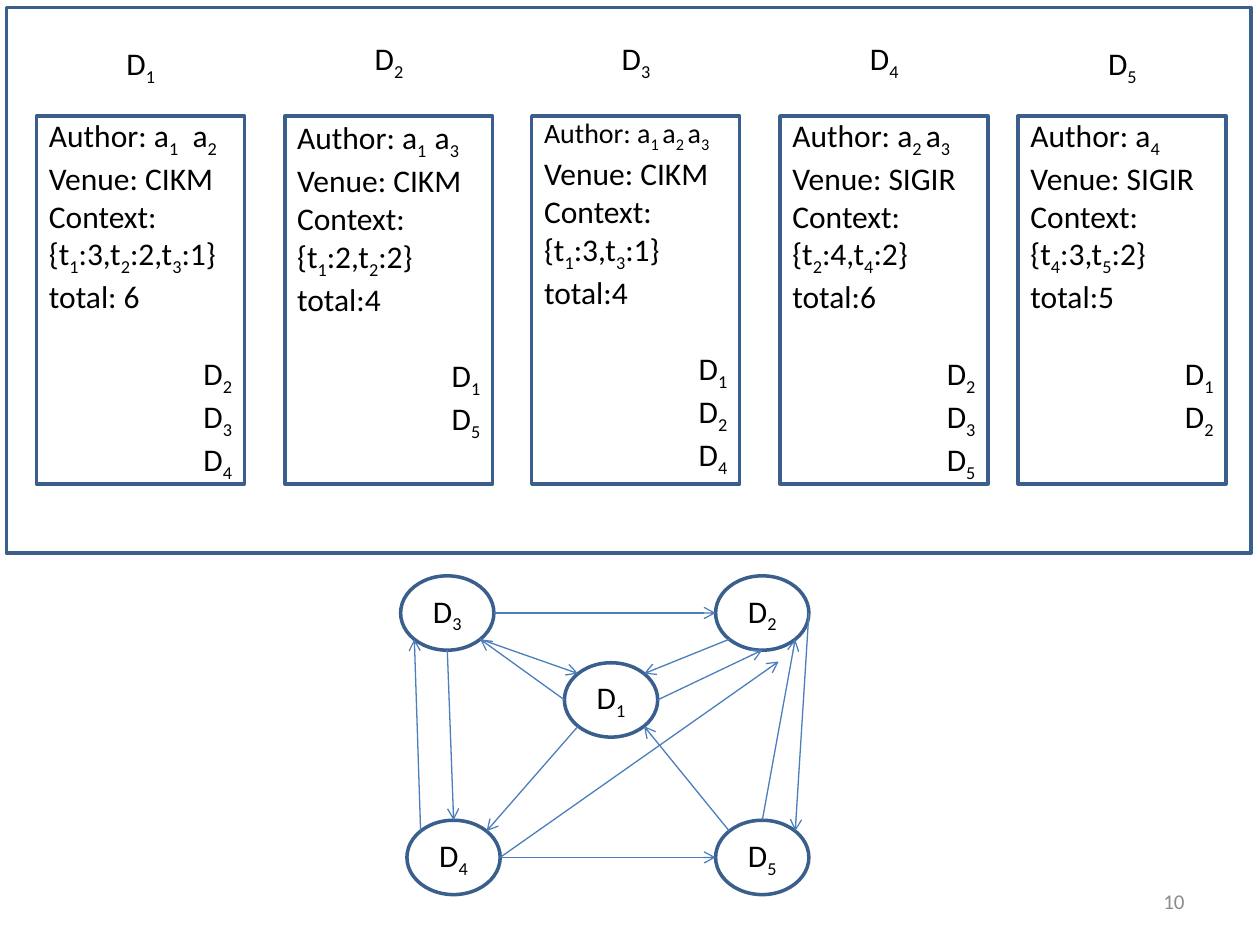
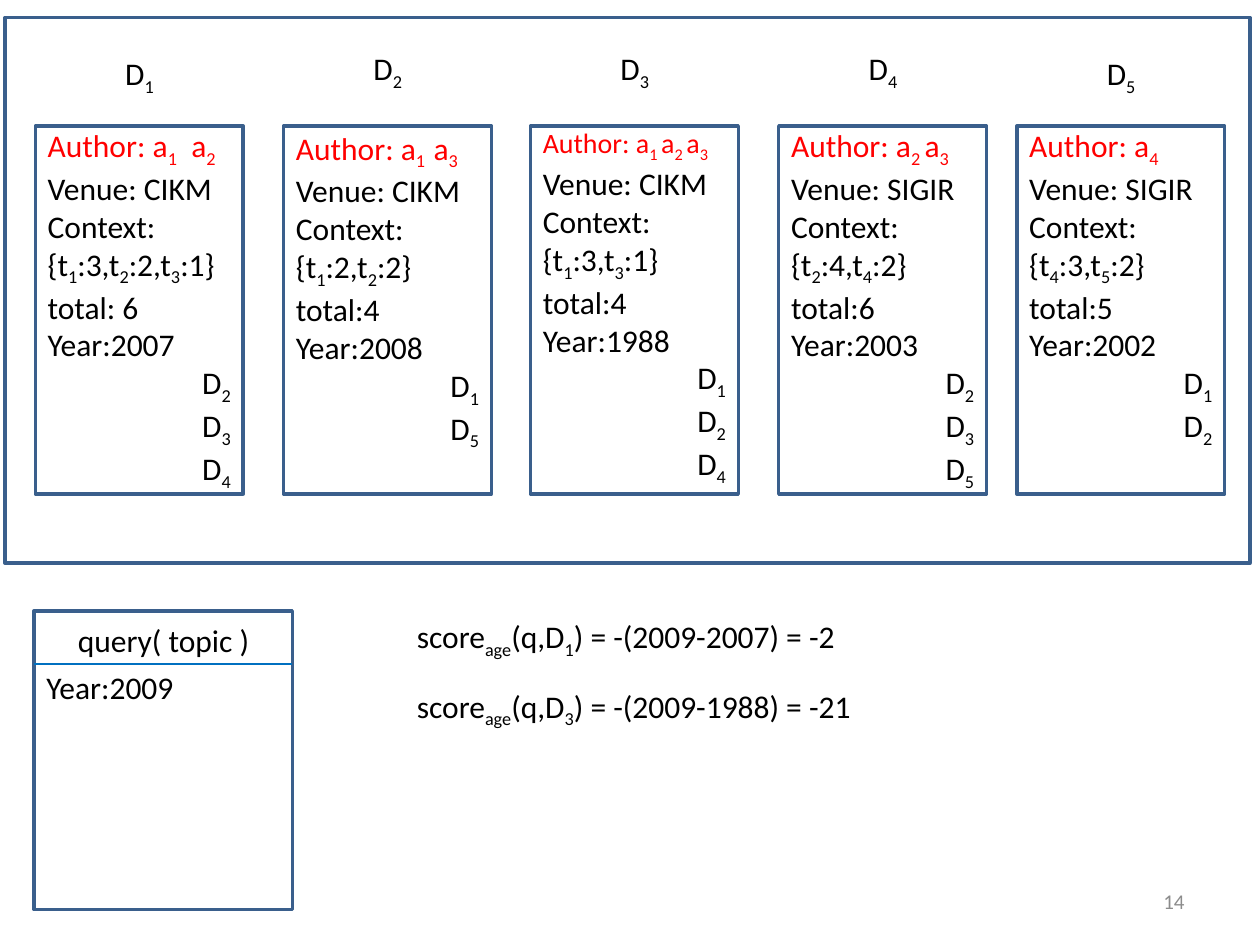
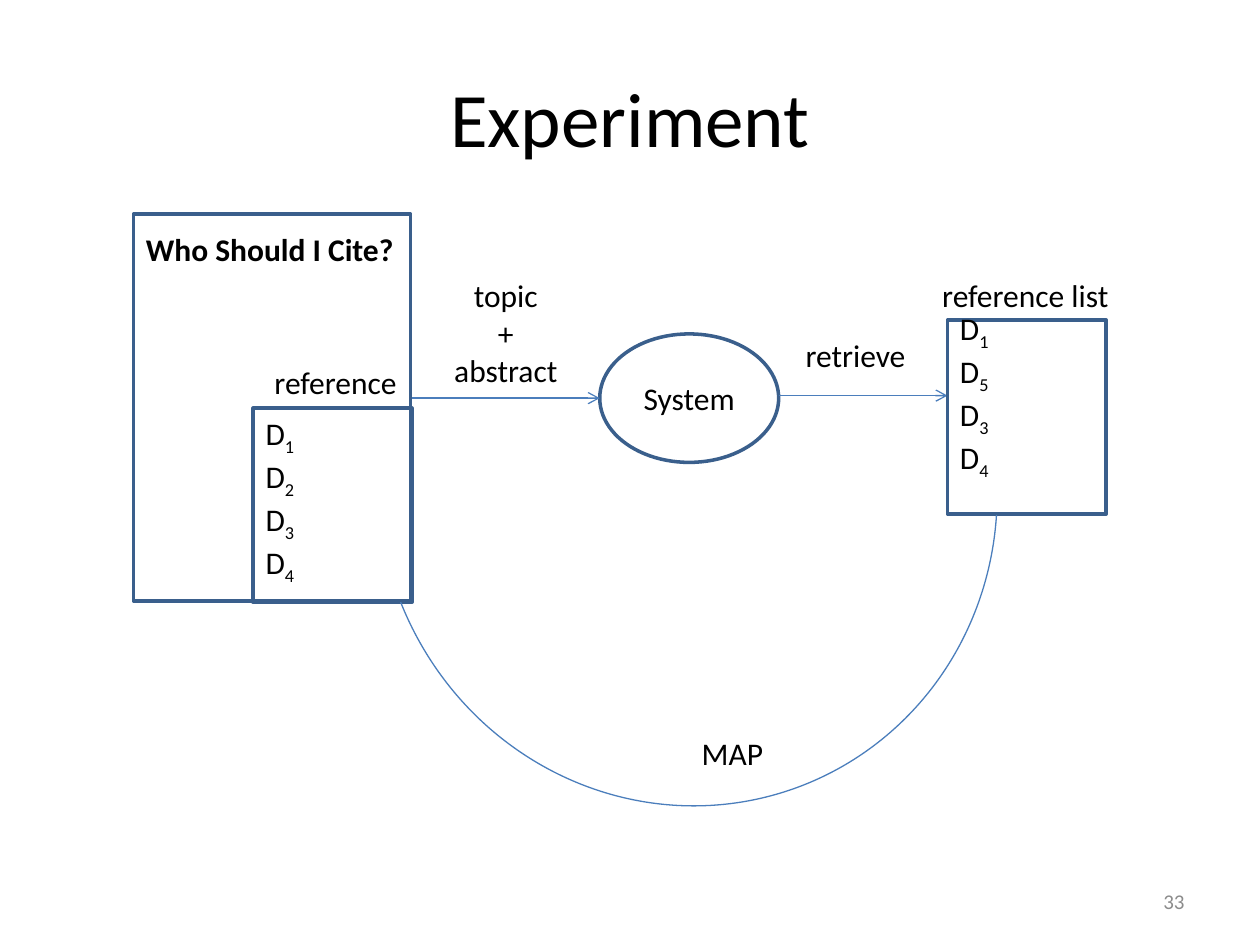
from dataclasses import dataclass
from math import cos, radians, sin

from lxml import etree
from pptx import Presentation
from pptx.dml.color import RGBColor
from pptx.enum.shapes import MSO_CONNECTOR, MSO_SHAPE
from pptx.enum.text import MSO_ANCHOR, MSO_AUTO_SIZE, PP_ALIGN
from pptx.oxml.ns import qn
from pptx.util import Inches, Pt

LEFT, CENTER, RIGHT = PP_ALIGN.LEFT, PP_ALIGN.CENTER, PP_ALIGN.RIGHT
TOP, MIDDLE = MSO_ANCHOR.TOP, MSO_ANCHOR.MIDDLE
FIT_TEXT = MSO_AUTO_SIZE.SHAPE_TO_FIT_TEXT
RECTANGLE, ELLIPSE, ARC = MSO_SHAPE.RECTANGLE, MSO_SHAPE.OVAL, MSO_SHAPE.ARC
STRAIGHT = MSO_CONNECTOR.STRAIGHT

FONT = "Calibri"
BLACK, RED, GREY = "000000", "FF0000", "8C8C8C"
OUTLINE, ARROW, RULE = "3A5F8C", "4B7EBC", "0070C0"
BODY_SIZE = 18
BLANK_LINE = 22

NODE_WIDTH, NODE_HEIGHT = 0.74, 0.59
SITE_ANGLES = {"right": 0, "bottom right": 45, "bottom": 90, "bottom left": 135,
               "left": 180, "top left": 225, "top": 270, "top right": 315}


@dataclass
class Line:
    """One paragraph; text in square brackets is set as subscript."""
    text: str
    align: PP_ALIGN = LEFT
    size: int = BODY_SIZE
    color: str = BLACK
    bold: bool = False
    before: int = 0


@dataclass
class Document:
    authors: str
    venue: str
    terms: str
    total: str
    year: int
    cites: str
    x: float
    title_y: float = 0.26
    author_size: int = BODY_SIZE
    inset: float = 0


DOCUMENTS = [
    Document("a[1]  a[2]", "CIKM", "{t[1]:3,t[2]:2,t[3]:1}", " 6", 2007, "234", 0.29, 0.3),
    Document("a[1  ]a[3]", "CIKM", "{t[1]:2,t[2]:2}", "4", 2008, "15", 2.26, inset=0.02),
    Document("a[1 ]a[2 ]a[3]", "CIKM", "{t[1]:3,t[3]:1}", "4", 1988, "124", 4.22, author_size=16),
    Document("a[2 ]a[3]", "SIGIR", "{t[2]:4,t[4]:2}", "6", 2003, "235", 6.19),
    Document("a[4]", "SIGIR", "{t[4]:3,t[5]:2}", "5", 2002, "12", 8.08, 0.3),
]

NODES = {"1": (4.48, 5.26), "2": (5.68, 4.57), "3": (3.18, 4.57),
         "4": (3.23, 6.51), "5": (5.68, 6.51)}
CITATIONS = [
    ("2", "bottom left", "1", "top right"),
    ("3", "bottom right", "1", "top left"),
    ("5", "top left", "1", "bottom right"),
    ("1", "right", "2", "bottom"),
    ("3", "right", "2", "left"),
    ("5", "top", "2", "bottom right"),
    ("1", "left", "3", "bottom right"),
    ("4", "top left", "3", "bottom left"),
    ("1", "bottom left", "4", "top right"),
    ("3", "bottom", "4", "top"),
    ("2", "right", "5", "top right"),
    ("4", "right", "5", "left"),
]


def rgb(value):
    return RGBColor.from_string(value)


def document_names(numbers, align=LEFT):
    return [Line(f"D[{number}]", align) for number in numbers]


def node_site(node, site):
    """Point on the outline of a graph node."""
    x, y = NODES[node]
    angle = radians(SITE_ANGLES[site])
    return (x + NODE_WIDTH / 2 * (1 + cos(angle)),
            y + NODE_HEIGHT / 2 * (1 + sin(angle)))


class Deck:
    def __init__(self):
        self.presentation = Presentation()
        self.presentation.slide_width = Inches(10)
        self.presentation.slide_height = Inches(7.5)
        self.slide = None

    def new_slide(self, number):
        self.slide = self.presentation.slides.add_slide(self.presentation.slide_layouts[6])
        self.label(7.17, 6.95, 2.33, 0.4, [Line(str(number), RIGHT, 12, GREY)],
                   wrap=True, anchor=MIDDLE)

    def add_lines(self, frame, lines):
        for index, line in enumerate(lines):
            paragraph = frame.paragraphs[0] if index == 0 else frame.add_paragraph()
            paragraph.alignment = line.align
            if line.before:
                paragraph.space_before = Pt(line.before)
            for part_index, part in enumerate(line.text.replace("]", "[").split("[")):
                if part:
                    self.add_run(paragraph, part, line, subscript=part_index % 2 == 1)

    def add_run(self, paragraph, text, line, subscript):
        run = paragraph.add_run()
        run.text = text
        run.font.name = FONT
        run.font.size = Pt(line.size)
        run.font.bold = line.bold
        run.font.color.rgb = rgb(line.color)
        if subscript:
            run.font._element.set("baseline", "-25000")

    def label(self, x, y, width, height, lines, wrap=False, anchor=TOP):
        box = self.slide.shapes.add_textbox(Inches(x), Inches(y), Inches(width), Inches(height))
        frame = box.text_frame
        frame.word_wrap = wrap
        if not wrap:
            frame.auto_size = FIT_TEXT
        frame.vertical_anchor = anchor
        self.add_lines(frame, lines)

    def outline(self, kind, x, y, width, height, color=OUTLINE, weight=2):
        shape = self.slide.shapes.add_shape(
            kind, Inches(x), Inches(y), Inches(width), Inches(height))
        shape.shadow.inherit = False
        shape.fill.background()
        shape.line.color.rgb = rgb(color)
        shape.line.width = Pt(weight)
        return shape

    def card(self, x, y, width, height, lines, inset_top=0, inset_bottom=0, anchor=TOP):
        frame = self.outline(RECTANGLE, x, y, width, height).text_frame
        frame.margin_top = Inches(inset_top)
        frame.margin_bottom = Inches(inset_bottom)
        frame.vertical_anchor = anchor
        self.add_lines(frame, lines)

    def bubble(self, x, y, width, height, text):
        frame = self.outline(ELLIPSE, x, y, width, height).text_frame
        frame.margin_left = frame.margin_right = 0
        frame.vertical_anchor = MIDDLE
        self.add_lines(frame, [Line(text, CENTER)])

    def connect(self, start, end, color=ARROW, arrow=True):
        connector = self.slide.shapes.add_connector(
            STRAIGHT, *(Inches(length) for length in (*start, *end)))
        connector.line.color.rgb = rgb(color)
        connector.line.width = Pt(0.75)
        if arrow:
            etree.SubElement(connector.line._get_or_add_ln(), qn("a:tailEnd"), type="arrow")
        etree.SubElement(connector._element.spPr, qn("a:effectLst"))

    def arc(self, x, y, width, height, rotation, ends):
        shape = self.outline(ARC, x, y, width, height, ARROW, 0.75)
        shape.rotation = rotation
        shape.adjustments[0], shape.adjustments[1] = ends

    def collection(self, dx=0, dy=0, author_color=BLACK, show_year=False):
        """The framed row of documents, moved by dx and dy."""
        for number, document in enumerate(DOCUMENTS, 1):
            cited = document_names(document.cites, RIGHT)
            lines = [
                Line(f"Author: {document.authors}", size=document.author_size,
                     color=author_color),
                Line(f"Venue: {document.venue}"),
                Line("Context:"),
                Line(document.terms),
                Line(f"total:{document.total}"),
            ]
            if show_year:
                lines.append(Line(f"Year:{document.year}"))
            else:
                cited[0].before = BLANK_LINE
            self.card(document.x + dx, 0.92 + dy, 1.65, 2.92, lines + cited,
                      inset_top=document.inset)
            self.label(document.x + 0.6 + dx, document.title_y + dy, 0.44, 0.4,
                       document_names([number], RIGHT))
        self.outline(RECTANGLE, 0.05 + dx, 0.06 + dy, 9.88, 4.33)


def citation_graph_slide(deck):
    deck.new_slide(10)
    deck.collection()
    for number, (x, y) in NODES.items():
        deck.bubble(x, y, NODE_WIDTH, NODE_HEIGHT, f"D[{number}]")
    for citing, start, cited, end in CITATIONS:
        deck.connect(node_site(citing, start), node_site(cited, end))
    deck.connect(node_site("4", "right"), (6.18, 5.25))


def age_score_slide(deck):
    deck.new_slide(14)
    deck.collection(-0.01, 0.08, author_color=RED, show_year=True)
    deck.card(0.27, 4.85, 2.05, 2.37, [Line("Year:2009")], inset_top=0.45)
    deck.connect((0.27, 5.27), (2.32, 5.27), RULE, arrow=False)
    deck.label(0.52, 4.88, 1.64, 0.31, [Line("query( topic )")])
    for y, document, year, score in ((4.85, 1, 2007, -2), (5.4, 3, 1988, -21)):
        formula = f"score[age](q,D[{document}]) = -(2009-{year}) = {score}"
        deck.label(3.21, y, 3.73, 0.4, [Line(formula)], wrap=True)


def experiment_slide(deck):
    deck.new_slide(33)
    deck.label(0.5, 0.3, 9, 1.25, [Line("Experiment", CENTER, 44)], wrap=True, anchor=MIDDLE)

    deck.label(1.06, 1.78, 2.2, 0.4, [Line("Who Should I Cite?", bold=True)], wrap=True)
    deck.outline(RECTANGLE, 1.06, 1.7, 2.2, 3.07)
    deck.card(2.01, 3.24, 1.26, 1.54, document_names("1234"), inset_top=0.05)
    deck.label(2.08, 2.83, 1.18, 0.4, [Line("reference")])

    deck.bubble(4.76, 2.65, 1.42, 1.02, "System")
    deck.connect((3.27, 3.16), (4.76, 3.16))
    deck.label(3.5, 2.14, 1.03, 1.01,
               [Line(text, CENTER) for text in ("topic", "+", "abstract")])
    deck.connect((6.18, 3.14), (7.52, 3.14))
    deck.label(6.29, 2.62, 1, 0.4, [Line("retrieve", CENTER)])

    deck.card(7.52, 2.54, 1.26, 1.54, document_names("1534"),
              inset_bottom=0.35, anchor=MIDDLE)
    deck.label(7.38, 2.14, 1.54, 0.4, [Line("reference list")])

    deck.arc(2.92, 1.42, 5.07, 4.9, rotation=71.3, ends=(176.25, 52.14))
    deck.label(5.47, 5.78, 0.69, 0.4, [Line("MAP")])


def main():
    deck = Deck()
    citation_graph_slide(deck)
    age_score_slide(deck)
    experiment_slide(deck)
    deck.presentation.save("out.pptx")


if __name__ == "__main__":
    main()
